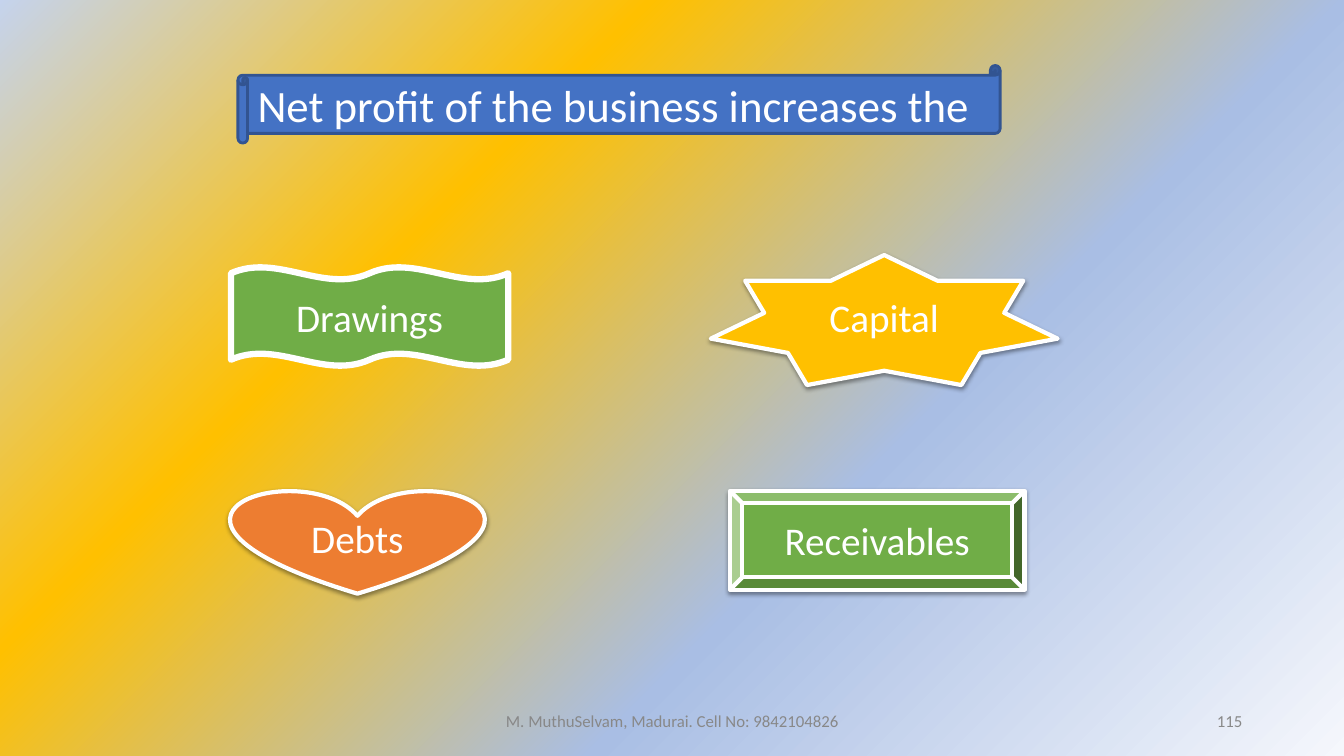
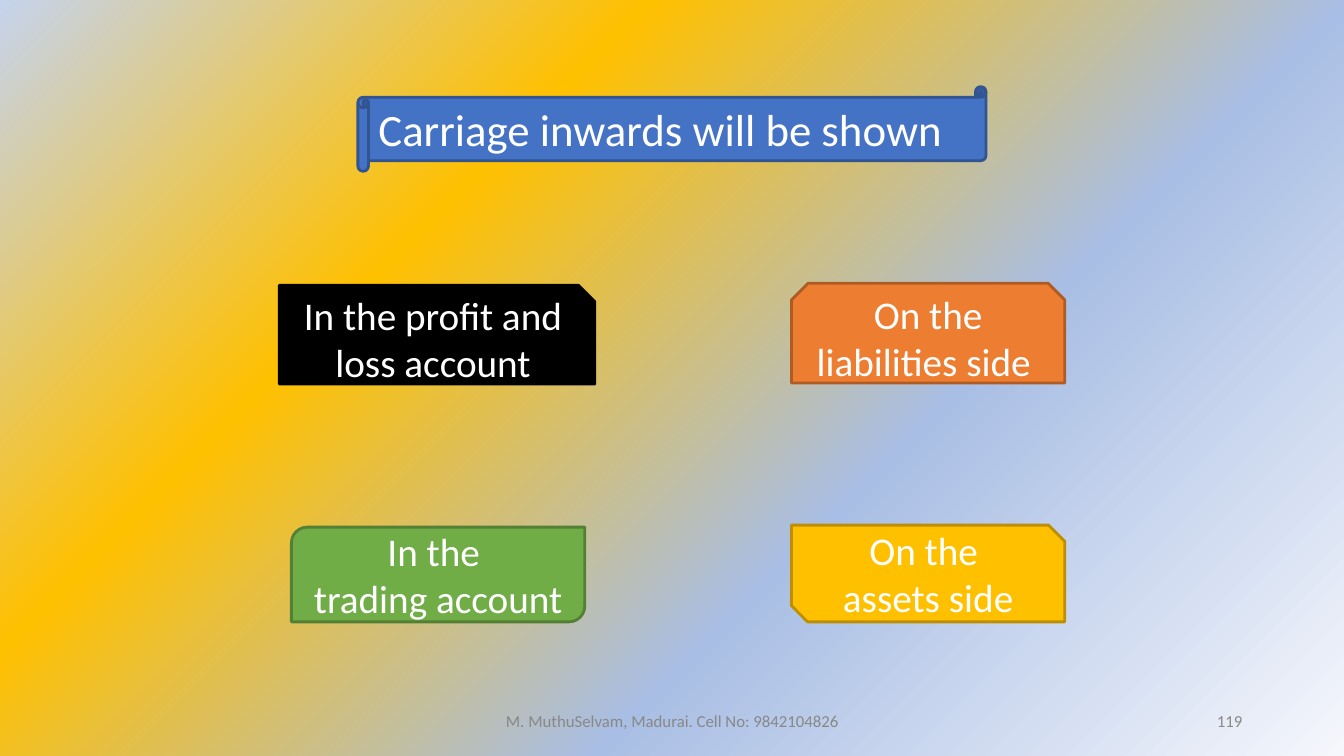
from lxml.etree import SubElement
from pptx import Presentation
from pptx.dml.color import RGBColor
from pptx.enum.shapes import MSO_SHAPE
from pptx.enum.text import MSO_ANCHOR, PP_ALIGN
from pptx.oxml.ns import qn
from pptx.util import Inches, Pt

# Shared colours and text
WHITE = RGBColor(0xFF, 0xFF, 0xFF)
BLACK = RGBColor(0x00, 0x00, 0x00)
BLUE = RGBColor(0x44, 0x72, 0xC4)
DARK_BLUE = RGBColor(0x32, 0x54, 0x91)
GREEN = RGBColor(0x70, 0xAD, 0x47)
DARK_GREEN = RGBColor(0x53, 0x80, 0x35)
ORANGE = RGBColor(0xED, 0x7D, 0x31)
DARK_ORANGE = RGBColor(0xAF, 0x5C, 0x24)
GOLD = RGBColor(0xFF, 0xC0, 0x00)
DARK_GOLD = RGBColor(0xBD, 0x8E, 0x00)
GREY = RGBColor(0x88, 0x88, 0x88)
PALE_BLUE = RGBColor(0xF5, 0xF7, 0xFC)
SOFT_BLUE = RGBColor(0xA9, 0xBE, 0xE4)
LIGHT_BLUE = RGBColor(0xC5, 0xD3, 0xED)
BACKGROUND_STOPS = [(0, PALE_BLUE), (36, SOFT_BLUE), (69, GOLD), (100, LIGHT_BLUE)]
FONT = "Calibri"
FOOTER = "M. MuthuSelvam, Madurai. Cell No: 9842104826"

# Each quiz slide: number, question with its box, and the answers as
# preset, box, lines of text, fill, line colour, line width, shadow
QUIZ = [
    ("115", "Net profit of the business increases the", (2.36, 0.65, 7.56, 0.77), [
        (MSO_SHAPE.DOUBLE_WAVE, (2.29, 2.65, 2.75, 0.98), ["Drawings"], GREEN, WHITE, 4.5, False),
        (MSO_SHAPE.STAR_7_POINT, (7.05, 2.53, 3.44, 1.29), ["Capital"], GOLD, WHITE, 3, True),
        (MSO_SHAPE.HEART, (2.29, 4.86, 2.51, 1.03), ["Debts"], ORANGE, WHITE, 3, True),
        (MSO_SHAPE.BEVEL, (7.24, 4.87, 2.92, 0.98), ["Receivables"], GREEN, WHITE, 3, True),
    ]),
    ("119", "Carriage inwards will be shown", (3.55, 0.86, 6.23, 0.84), [
        (MSO_SHAPE.SNIP_1_RECTANGLE, (2.77, 2.83, 3.13, 0.98),
         ["In the profit and loss account"], BLACK, BLACK, 2, False),
        (MSO_SHAPE.SNIP_2_SAME_RECTANGLE, (7.85, 2.81, 2.71, 0.99),
         ["On the liabilities side "], ORANGE, DARK_ORANGE, 2, False),
        (MSO_SHAPE.ROUND_2_DIAG_RECTANGLE, (2.89, 5.23, 2.91, 0.94),
         ["In the ", "trading account"], GREEN, DARK_GREEN, 2, False),
        (MSO_SHAPE.SNIP_2_DIAG_RECTANGLE, (7.85, 5.21, 2.71, 0.96),
         ["On the ", "assets side"], GOLD, DARK_GOLD, 2, False),
    ]),
]


def write_text(shape, lines, size, color, alignment):
    frame = shape.text_frame
    frame.word_wrap = True
    frame.vertical_anchor = MSO_ANCHOR.MIDDLE
    for index, line in enumerate(lines):
        paragraph = frame.add_paragraph() if index else frame.paragraphs[0]
        paragraph.alignment = alignment
        run = paragraph.add_run()
        run.text = line
        run.font.name = FONT
        run.font.size = Pt(size)
        run.font.color.rgb = color


def add_filled_shape(slide, preset, box, fill, line, width):
    shape = slide.shapes.add_shape(preset, *map(Inches, box))
    shape.shadow.inherit = False
    shape.fill.solid()
    shape.fill.fore_color.rgb = fill
    shape.line.color.rgb = line
    shape.line.width = Pt(width)
    return shape


presentation = Presentation()
presentation.slide_width = Inches(13.33)
presentation.slide_height = Inches(7.5)

# Gradient background on the master, spreading from the bottom right corner
master = presentation.slide_master
master.background.fill.gradient()
gradient = master.element.find(".//" + qn("a:gradFill"))
for child in list(gradient):
    gradient.remove(child)
stop_list = SubElement(gradient, qn("a:gsLst"))
for position, color in BACKGROUND_STOPS:
    stop = SubElement(stop_list, qn("a:gs"), pos=str(position * 1000))
    SubElement(stop, qn("a:srgbClr"), val=str(color))
circle = SubElement(gradient, qn("a:path"), {"path": "circle"})
SubElement(circle, qn("a:fillToRect"), l="100000", t="100000")
SubElement(gradient, qn("a:tileRect"), r="-100000", b="-100000")

for number, question, question_box, answers in QUIZ:
    slide = presentation.slides.add_slide(presentation.slide_layouts[6])

    # Question scroll
    scroll = add_filled_shape(slide, MSO_SHAPE.HORIZONTAL_SCROLL, question_box, BLUE, DARK_BLUE, 2)
    write_text(scroll, [question], 32, WHITE, PP_ALIGN.LEFT)

    # Answers
    for preset, box, lines, fill, line, width, has_shadow in answers:
        answer = add_filled_shape(slide, preset, box, fill, line, width)
        write_text(answer, lines, 28, WHITE, PP_ALIGN.CENTER)
        if has_shadow:
            effects = answer.element.spPr.find(qn("a:effectLst"))
            shadow = SubElement(effects, qn("a:outerShdw"), blurRad=str(Pt(3.1)),
                                dist=str(Pt(1.6)), dir="5400000", rotWithShape="0")
            shadow_color = SubElement(shadow, qn("a:srgbClr"), val=str(BLACK))
            SubElement(shadow_color, qn("a:alpha"), val="38000")

    # Footer and slide number
    for left, width, text, alignment in [(4.42, 4.5, FOOTER, PP_ALIGN.CENTER),
                                         (9.42, 3, number, PP_ALIGN.RIGHT)]:
        text_box = slide.shapes.add_textbox(Inches(left), Inches(6.95), Inches(width), Inches(0.4))
        write_text(text_box, [text], 12, GREY, alignment)

presentation.save("out.pptx")
